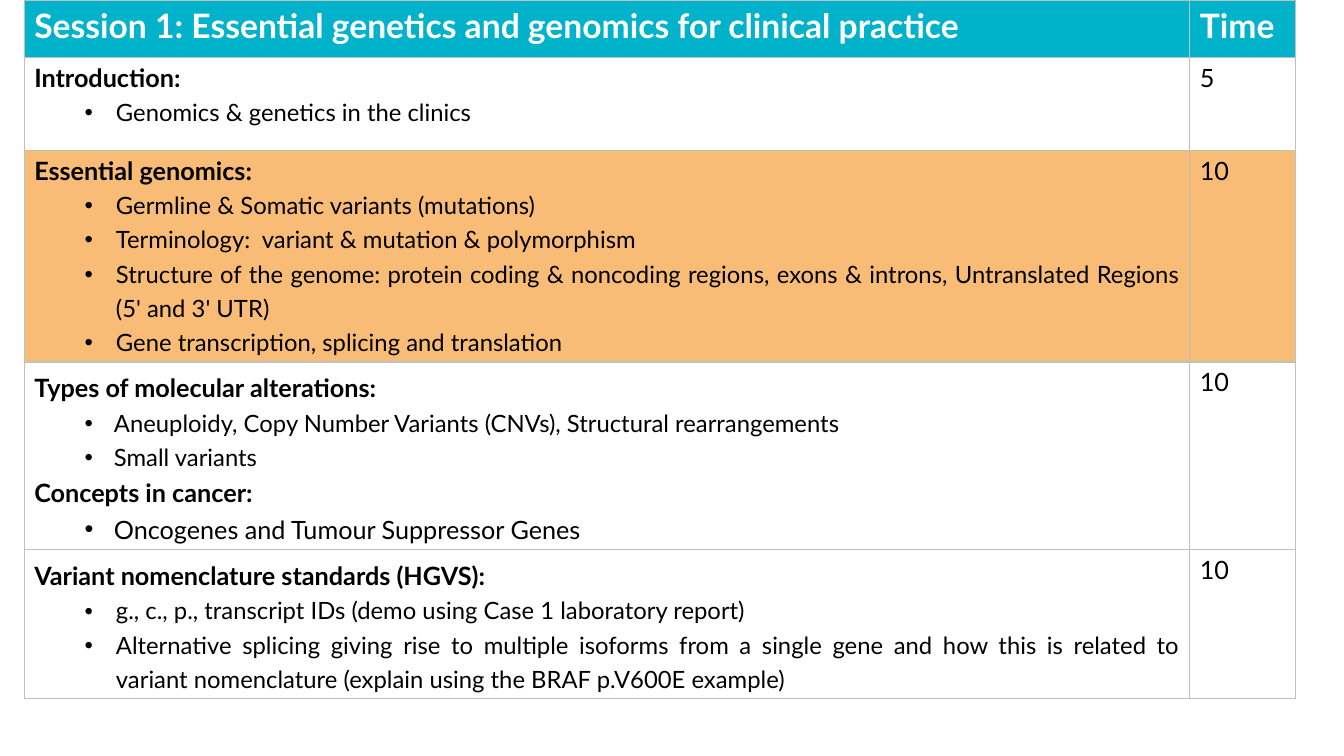
from dataclasses import dataclass

from lxml import etree
from pptx import Presentation
from pptx.dml.color import RGBColor
from pptx.enum.text import PP_ALIGN
from pptx.oxml.ns import qn
from pptx.util import Inches, Pt

JUSTIFY = PP_ALIGN.JUSTIFY
FONT = "Lato"
BLACK, WHITE = "000000", "FFFFFF"
TEAL, ORANGE, GREY = "00B2CA", "F9BC76", "BFBFBF"
COLUMN_WIDTHS = (11.56, 1.05)


@dataclass
class Line:
    text: str
    size: float = 18
    bold: bool = False
    color: str = BLACK
    align: PP_ALIGN | None = None
    spacing: float | None = None
    margin: float = 0
    bullet: bool = False
    hang: float = 0


@dataclass
class Row:
    height: float
    topics: list[Line]
    time: Line
    fill: str | None = None


def rgb(value: str) -> RGBColor:
    return RGBColor.from_string(value)


def heading(text: str, spacing: float | None = None) -> Line:
    return Line(text, bold=True, align=JUSTIFY, spacing=spacing)


def bullet(text: str, size: float = 17, margin: float = 0.81) -> Line:
    return Line(text, size, align=JUSTIFY, spacing=1.2, margin=margin,
                bullet=True, hang=margin - 0.5)


def header(text: str) -> Line:
    return Line(text, 24, True, WHITE)


ROWS = [
    Row(0.57, [header("Session 1: Essential genetics and genomics for clinical practice")],
        header("Time"), TEAL),
    Row(0.92, [
        heading("Introduction:"),
        bullet("Genomics & genetics in the clinics"),
    ], Line("5")),
    Row(2.1, [
        heading("Essential genomics:"),
        bullet("Germline & Somatic variants (mutations)"),
        bullet("Terminology:  variant & mutation & polymorphism"),
        bullet("Structure of the genome: protein coding & noncoding regions, "
               "exons & introns, Untranslated Regions (5' and 3' UTR)"),
        bullet("Gene transcription, splicing and translation"),
    ], Line("10"), ORANGE),
    Row(1.85, [
        heading("Types of molecular alterations:", 1.2),
        bullet("Aneuploidy, Copy Number Variants (CNVs), Structural rearrangements",
               margin=0.79),
        bullet("Small variants", margin=0.79),
        heading("Concepts in cancer:", 1.2),
        bullet("Oncogenes and Tumour Suppressor Genes", 18, 0.79),
    ], Line("10")),
    Row(1.48, [
        heading("Variant nomenclature standards (HGVS):", 1.2),
        bullet("g., c., p., transcript IDs (demo using Case 1 laboratory report)"),
        bullet("Alternative splicing giving rise to multiple isoforms from a single gene "
               "and how this is related to variant nomenclature "
               "(explain using the BRAF p.V600E example)"),
    ], Line("10")),
]


def write_line(p, line: Line) -> None:
    pPr = p._p.get_or_add_pPr()
    if line.bullet:
        p.level = 1
        pPr.set("marL", str(Inches(line.margin)))
        pPr.set("indent", str(-Inches(line.hang)))
        etree.SubElement(pPr, qn("a:buFont")).set("typeface", "Arial")
        etree.SubElement(pPr, qn("a:buChar")).set("char", "•")
    p.alignment = line.align
    p.line_spacing = line.spacing
    r = p.add_run()
    r.text = line.text
    values = {"name": FONT, "size": Pt(line.size), "bold": line.bold}
    for name, value in values.items():
        setattr(r.font, name, value)
    r.font.color.rgb = rgb(line.color)


def add_borders(cell) -> None:
    tcPr = cell._tc.get_or_add_tcPr()
    for side in ("lnL", "lnR", "lnT", "lnB"):
        ln = etree.SubElement(tcPr, qn(f"a:{side}"), w=str(Pt(1)))
        fill = etree.SubElement(ln, qn("a:solidFill"))
        etree.SubElement(fill, qn("a:srgbClr"), val=GREY)


def fill_cell(cell, lines: list[Line], fill: str | None) -> None:
    add_borders(cell)
    if fill:
        cell.fill.solid()
        cell.fill.fore_color.rgb = rgb(fill)
    else:
        cell.fill.background()
    tf = cell.text_frame
    for i, line in enumerate(lines):
        write_line(tf.add_paragraph() if i else tf.paragraphs[0], line)


def add_agenda(s, rows: list[Row]) -> None:
    table = s.shapes.add_table(
        len(rows), len(COLUMN_WIDTHS), Inches(0.24), Inches(0),
        Inches(sum(COLUMN_WIDTHS)), Inches(sum(row.height for row in rows))).table
    table.horz_banding = False
    for column, width in zip(table.columns, COLUMN_WIDTHS):
        column.width = Inches(width)
    for i, row in enumerate(rows):
        table.rows[i].height = Inches(row.height)
        for j, lines in enumerate((row.topics, [row.time])):
            fill_cell(table.cell(i, j), lines, row.fill)


def main() -> None:
    prs = Presentation()
    prs.slide_width, prs.slide_height = Inches(13.33), Inches(7.5)
    s = prs.slides.add_slide(prs.slide_layouts[6])
    add_agenda(s, ROWS)
    prs.save("out.pptx")


if __name__ == "__main__":
    main()
